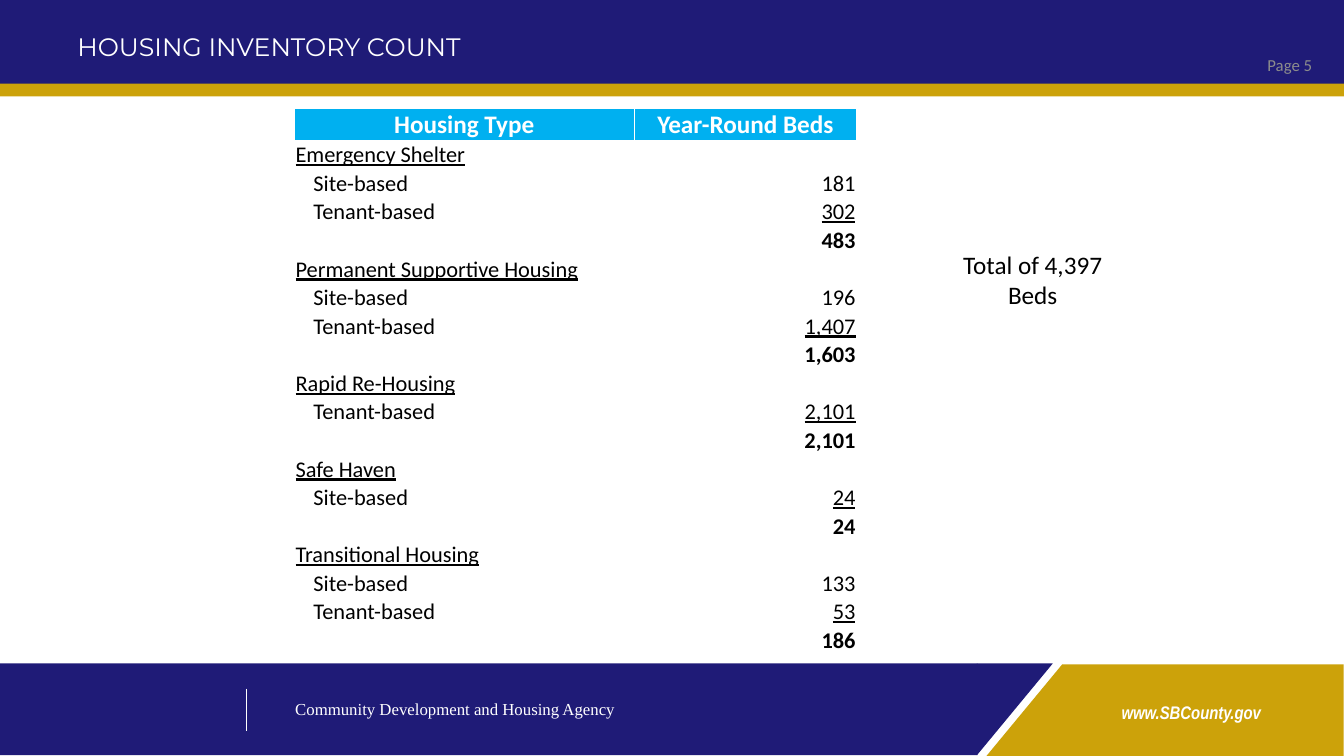
from lxml.etree import SubElement
from pptx import Presentation
from pptx.dml.color import RGBColor
from pptx.enum.shapes import MSO_CONNECTOR, MSO_SHAPE as Shape
from pptx.enum.text import MSO_ANCHOR as Anchor, PP_ALIGN as Align
from pptx.oxml.ns import qn
from pptx.util import Cm, Pt

NAVY = RGBColor(0x1F, 0x1B, 0x77)
GOLD = RGBColor(0xCC, 0xA2, 0x0A)
SKY = RGBColor(0x00, 0xB0, 0xF0)
GREY = RGBColor(0x8C, 0x8C, 0x8C)
WHITE = RGBColor(0xFF, 0xFF, 0xFF)
BLACK = RGBColor(0, 0, 0)

# Content: housing type, its beds by kind, and the total
HEADERS = ("Housing Type", "Year-Round Beds")
HOUSING = [
    ("Emergency Shelter", [("Site-based", "181"), ("Tenant-based", "302")], "483"),
    ("Permanent Supportive Housing",
     [("Site-based", "196"), ("Tenant-based", "1,407")], "1,603"),
    ("Rapid Re-Housing", [("Tenant-based", "2,101")], "2,101"),
    ("Safe Haven", [("Site-based", "24")], "24"),
    ("Transitional Housing", [("Site-based", "133"), ("Tenant-based", "53")], "186"),
]

# Bands: preset, colour, rotation, (left, top, width, height) in cm
BANDS = [
    (Shape.RECTANGLE, GOLD, 0, (0, 2.01, 33.91, 0.42)),
    (Shape.RECTANGLE, NAVY, 0, (0, 0, 33.91, 2.11)),
    (Shape.RECTANGLE, GOLD, 0, (26.77, 16.74, 7.09, 2.31)),
    (Shape.RIGHT_TRIANGLE, GOLD, 270, (24.66, 16.94, 2.31, 1.91)),
    (Shape.RECTANGLE, NAVY, 0, (-0.03, 16.72, 24.66, 2.31)),
    (Shape.RIGHT_TRIANGLE, NAVY, 90, (24.42, 16.92, 2.31, 1.91)),
]

# Texts: wording, box in cm, anchor, alignment, font, size, colour, bold italic
TEXTS = [
    ("www.SBCounty.gov", (26.21, 17.55, 7.62, 0.81), Anchor.TOP, Align.CENTER,
     "Arial Narrow", 13, WHITE, True),
    ("Page 5", (29.36, 1.12, 3.96, 1.02), Anchor.MIDDLE, Align.RIGHT,
     "Calibri", 12, GREY, False),
    ("Community Development and Housing Agency", (7.19, 17.48, 13.41, 1.14),
     Anchor.TOP, Align.LEFT, "Times New Roman", 12, WHITE, False),
    ("HOUSING INVENTORY COUNT", (1.7, -0.43, 30.48, 3.18), Anchor.MIDDLE,
     Align.LEFT, "Montserrat", 18, WHITE, False),
    ("Total of 4,397 Beds", (23.7, 6.15, 4.65, 1.8), Anchor.TOP, Align.CENTER,
     "Calibri", 18, BLACK, False),
]

TABLE_LEFT, TABLE_TOP = 7.42, 2.74
COLUMN_WIDTHS = (8.56, 5.61)
HEADER_HEIGHT, ROW_HEIGHT = 0.79, 0.72
MARGIN, INDENT = 0.03, 0.48


def add_run(paragraph, text, font_name, size, color, bold=False, underline=False):
    run = paragraph.add_run()
    run.text = text
    font = run.font
    font.name, font.size = font_name, Pt(size)
    font.bold, font.underline = bold, underline
    font.color.rgb = color
    return run


def fill_cell(cell, text, align, size=16, color=BLACK, fill=None, indent=MARGIN,
              bold=False, underline=False):
    cell.margin_left, cell.margin_right = Cm(indent), Cm(MARGIN)
    cell.margin_top, cell.margin_bottom = Cm(MARGIN), 0
    cell.vertical_anchor = Anchor.BOTTOM
    properties = cell._tc.get_or_add_tcPr()
    for side in ("a:lnL", "a:lnR", "a:lnT", "a:lnB"):
        border = SubElement(properties, qn(side), w=str(Pt(1)))
        SubElement(SubElement(border, qn("a:solidFill")), qn("a:srgbClr"),
                   val=str(WHITE))
    if fill is None:
        cell.fill.background()
    else:
        cell.fill.solid()
        cell.fill.fore_color.rgb = fill
    paragraph = cell.text_frame.paragraphs[0]
    paragraph.alignment = align
    if text:
        add_run(paragraph, text, "Calibri", size, color, bold, underline)
    else:
        SubElement(paragraph._p, qn("a:endParaRPr"), sz=str(size * 100))


presentation = Presentation()
presentation.slide_width, presentation.slide_height = Cm(33.87), Cm(19.05)
slide = presentation.slides.add_slide(presentation.slide_layouts[6])

# Header and footer bands
for preset, color, rotation, box in BANDS:
    shape = slide.shapes.add_shape(preset, *map(Cm, box))
    shape.shadow.inherit = False
    shape.rotation = rotation
    shape.fill.solid()
    shape.fill.fore_color.rgb = color
    shape.line.fill.background()

# Footer divider
divider = slide.shapes.add_connector(
    MSO_CONNECTOR.STRAIGHT, Cm(6.2), Cm(17.35), Cm(6.2), Cm(18.42))
divider.line.color.rgb = WHITE
divider.line.width = Pt(0.25)
SubElement(divider._element.spPr, qn("a:effectLst"))

# Title, page number, footer texts and total
for text, box, anchor, align, font_name, size, color, emphasis in TEXTS:
    frame = slide.shapes.add_textbox(*map(Cm, box)).text_frame
    frame.word_wrap = True
    frame.vertical_anchor = anchor
    paragraph = frame.paragraphs[0]
    paragraph.alignment = align
    run = add_run(paragraph, text, font_name, size, color, emphasis)
    run.font.italic = emphasis

# Table rows: options of the left and the right cell
rows = []
for housing_type, kinds, total in HOUSING:
    rows.append((dict(text=housing_type, underline=True), dict(text="")))
    for kind, beds in kinds:
        last = (kind, beds) == kinds[-1]
        rows.append((dict(text=kind, indent=INDENT), dict(text=beds, underline=last)))
    rows.append((dict(text=""), dict(text=total, bold=True)))

# Bed table
table = slide.shapes.add_table(
    len(rows) + 1, len(HEADERS), Cm(TABLE_LEFT), Cm(TABLE_TOP),
    Cm(sum(COLUMN_WIDTHS)), Cm(HEADER_HEIGHT + ROW_HEIGHT * len(rows))).table
table.horz_banding = table.first_row = False
for column, width in zip(table.columns, COLUMN_WIDTHS):
    column.width = Cm(width)
for index, row in enumerate(table.rows):
    row.height = Cm(ROW_HEIGHT if index else HEADER_HEIGHT)
for index, header in enumerate(HEADERS):
    fill_cell(table.cell(0, index), header, Align.CENTER, 18, WHITE, SKY, bold=True)
for index, (left, right) in enumerate(rows, 1):
    fill_cell(table.cell(index, 0), align=Align.LEFT, **left)
    fill_cell(table.cell(index, 1), align=Align.RIGHT, **right)

presentation.save("out.pptx")
